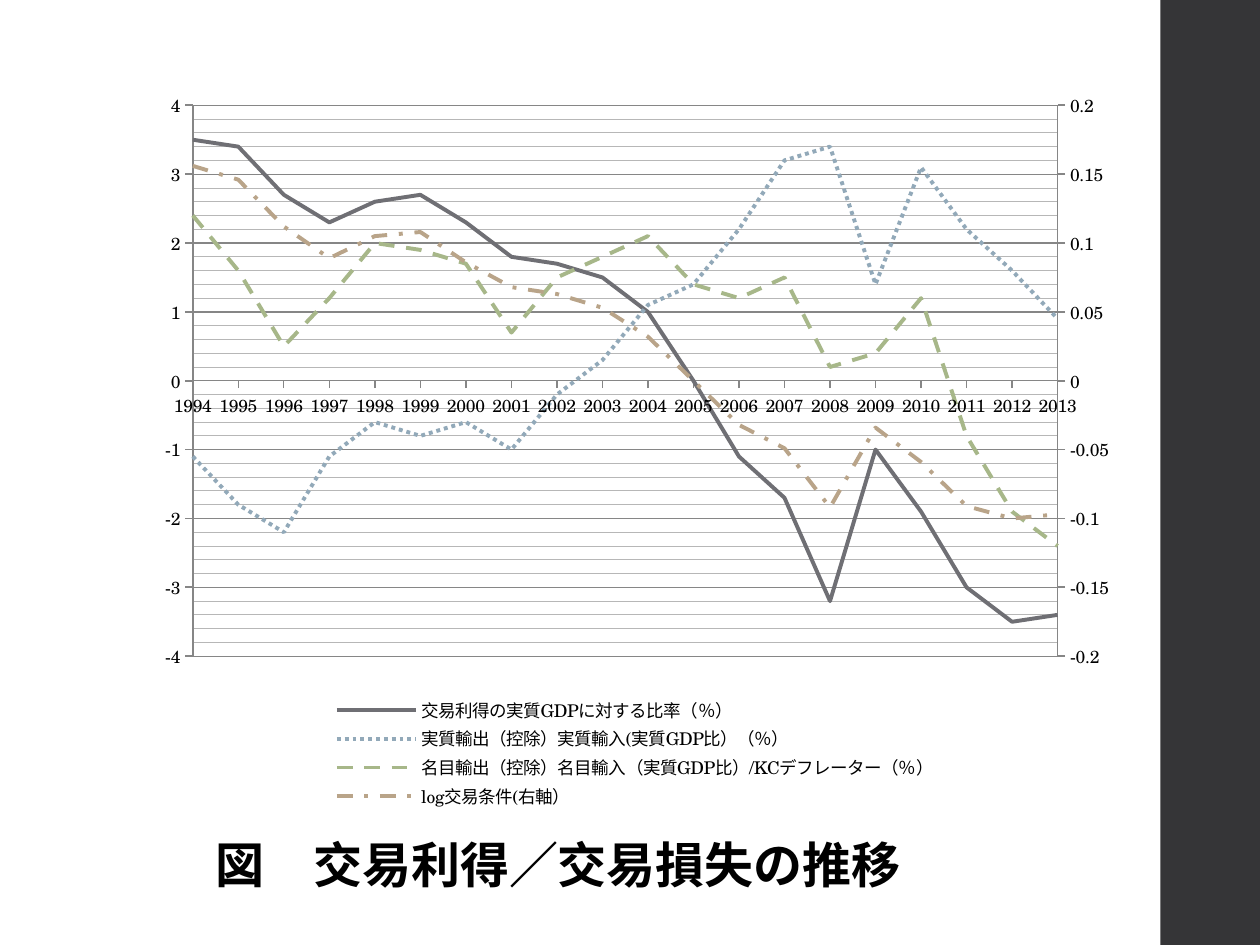
import copy
import pptx
import pptx.chart.data
import pptx.dml.color
import pptx.enum.chart
import pptx.enum.dml
import pptx.enum.shapes
import pptx.enum.text
import pptx.oxml
import pptx.oxml.ns
import pptx.util
from pptx.util import Inches

THEME = {
    "font": "TeX Gyre Schola", "text": "000000", "bar": "353537",
    "axis": "868686", "minor": "B7B7B7",
    "title_size": 28, "chart_size": 10, "series_width": 2.25,
}
qn = pptx.oxml.ns.qn
DASH = pptx.enum.dml.MSO_LINE


def rgb(value):
    return pptx.dml.color.RGBColor.from_string(value)


def add_text(tf, text, size, color, bold=False, align=pptx.enum.text.PP_ALIGN.LEFT):
    p = tf.paragraphs[0]
    p.alignment = align
    r = p.add_run()
    r.text = text
    r.font.name = THEME["font"]
    r.font.size = pptx.util.Pt(size)
    r.font.bold = bold
    r.font.color.rgb = rgb(color)


prs = pptx.Presentation()
prs.slide_width, prs.slide_height = Inches(10), Inches(7.5)
s = prs.slides.add_slide(prs.slide_layouts[5])

bar = s.shapes.add_shape(pptx.enum.shapes.MSO_SHAPE.RECTANGLE,
                         Inches(9.21), Inches(0), Inches(0.79), Inches(7.5))
bar.shadow.inherit = False
bar.fill.solid()
bar.fill.fore_color.rgb = rgb(THEME["bar"])
bar.line.fill.background()

series_data = [
    ("交易利得の実質GDPに対する比率（％）", "6F6F74", DASH.SOLID,
     [3.5, 3.4, 2.7, 2.3, 2.6, 2.7, 2.3, 1.8, 1.7, 1.5,
      1, 0, -1.1, -1.7, -3.2, -1, -1.9, -3, -3.5, -3.4]),
    ("実質輸出（控除）実質輸入(実質GDP比）（％）", "92A9B9", DASH.ROUND_DOT,
     [-1.1, -1.8, -2.2, -1.1, -0.6, -0.8, -0.6, -1, -0.2, 0.3,
      1.1, 1.4, 2.2, 3.2, 3.4, 1.4, 3.1, 2.2, 1.6, 0.9]),
    ("名目輸出（控除）名目輸入（実質GDP比）/KCデフレーター（％）", "A7B789", DASH.DASH,
     [2.4, 1.6, 0.5, 1.2, 2, 1.9, 1.7, 0.7, 1.5, 1.8,
      2.1, 1.4, 1.2, 1.5, 0.2, 0.4, 1.2, -0.8, -1.9, -2.4]),
    ("log交易条件(右軸）", "B9A489", DASH.DASH_DOT,
     [0.156, 0.146, 0.112, 0.089, 0.105, 0.108, 0.086, 0.068, 0.063, 0.053,
      0.032, 0, -0.032, -0.049, -0.092, -0.034, -0.059, -0.091, -0.1, -0.097]),
]
data = pptx.chart.data.CategoryChartData()
data.categories = [str(year) for year in range(1994, 2014)]
for name, color, dash, values in series_data:
    data.add_series(name, values)

chart = s.shapes.add_chart(pptx.enum.chart.XL_CHART_TYPE.LINE, Inches(1.14), Inches(0.6),
                           Inches(7.8), Inches(5.91), data).chart
chart.has_title = False
chart.font.name = THEME["font"]
chart.font.size = pptx.util.Pt(THEME["chart_size"])
chart.font.color.rgb = rgb(THEME["text"])
chart.has_legend = True
chart.legend.position = pptx.enum.chart.XL_LEGEND_POSITION.BOTTOM
chart.legend.include_in_layout = False
chart.plots[0].vary_by_categories = False

for series, (name, color, dash, values) in zip(chart.plots[0].series, series_data):
    series.smooth = False
    series.marker.style = pptx.enum.chart.XL_MARKER_STYLE.NONE
    series.format.line.color.rgb = rgb(color)
    series.format.line.width = pptx.util.Pt(THEME["series_width"])
    series.format.line.dash_style = dash

val, cat = chart.value_axis, chart.category_axis
val_xml, cat_xml = val._element, cat._element
val.minimum_scale, val.maximum_scale = -4, 4
val.major_unit, val.minor_unit = 1, 0.2
val.has_major_gridlines = val.has_minor_gridlines = True
for part, color, width in [(val, "axis", 1), (cat, "axis", 0.75),
                           (val.major_gridlines, "axis", 0.75)]:
    part.format.line.color.rgb = rgb(THEME[color])
    part.format.line.width = pptx.util.Pt(width)
minor_style = copy.deepcopy(val_xml.find(qn("c:majorGridlines")).find(qn("c:spPr")))
minor_style.find(qn("a:ln")).set("w", str(int(pptx.util.Pt(0.5))))
next(minor_style.iter(qn("a:srgbClr"))).set("val", THEME["minor"])
val_xml.find(qn("c:minorGridlines")).append(minor_style)
for axis in (val, cat):
    axis.major_tick_mark = pptx.enum.chart.XL_TICK_MARK.OUTSIDE
    axis.minor_tick_mark = pptx.enum.chart.XL_TICK_MARK.NONE

for old in val_xml.findall(qn("c:crossBetween")):
    val_xml.remove(old)
between = pptx.oxml.parse_xml(
    '<c:crossBetween %s val="midCat"/>' % pptx.oxml.ns.nsdecls("c"))
val_xml.find(qn("c:crosses")).addnext(between)

left_plot = val_xml.getparent().find(qn("c:lineChart"))
right_plot = copy.deepcopy(left_plot)
left_plot.remove(left_plot.findall(qn("c:ser"))[-1])
for ser in right_plot.findall(qn("c:ser"))[:-1]:
    right_plot.remove(ser)
left_plot.addnext(right_plot)
right_val, right_cat = copy.deepcopy(val_xml), copy.deepcopy(cat_xml)
val_xml.addnext(right_val)
right_val.addnext(right_cat)

cat_id, val_id = "50010", "50020"
for node, own_id in zip(right_plot.findall(qn("c:axId")), (cat_id, val_id)):
    node.set("val", own_id)
for axis, own_id, cross_id in [(right_val, val_id, cat_id), (right_cat, cat_id, val_id)]:
    axis.find(qn("c:axId")).set("val", own_id)
    axis.find(qn("c:crossAx")).set("val", cross_id)
right_cat.find(qn("c:delete")).set("val", "1")
for tag in ("c:majorGridlines", "c:minorGridlines"):
    right_val.remove(right_val.find(qn(tag)))
for tag, value in [("c:axPos", "r"), ("c:crosses", "max"), ("c:majorUnit", "0.05"),
                   ("c:minorUnit", "0.01"), ("c:scaling/c:min", "-0.2"),
                   ("c:scaling/c:max", "0.2")]:
    right_val.find("/".join(qn(t) for t in tag.split("/"))).set("val", value)

layouts = [(val_xml.getparent(), '<c:layoutTarget val="inner"/>', (0.05, 0.04, 0.88, 0.74)),
           (chart.legend._element, "", (0.18, 0.83, 0.64, 0.16))]
for owner, target, box in layouts:
    for old in owner.findall(qn("c:layout")):
        owner.remove(old)
    places = "".join('<c:%s val="%s"/>' % pair for pair in zip("xywh", box))
    layout = pptx.oxml.parse_xml(
        '<c:layout %s><c:manualLayout>%s<c:xMode val="edge"/><c:yMode val="edge"/>%s'
        '</c:manualLayout></c:layout>' % (pptx.oxml.ns.nsdecls("c"), target, places))
    position = owner.find(qn("c:legendPos"))
    if position is None:
        owner.insert(0, layout)
    else:
        position.addnext(layout)

title = s.shapes.title
title.left, title.top, title.width, title.height = (Inches(v) for v in (1.61, 6.57, 6.93, 0.57))
tf = title.text_frame
tf.word_wrap = True
tf.auto_size = pptx.enum.text.MSO_AUTO_SIZE.NONE
tf.vertical_anchor = pptx.enum.text.MSO_ANCHOR.MIDDLE
add_text(tf, "図　交易利得／交易損失の推移", size=THEME["title_size"], color=THEME["text"], bold=True)

prs.save("out.pptx")
